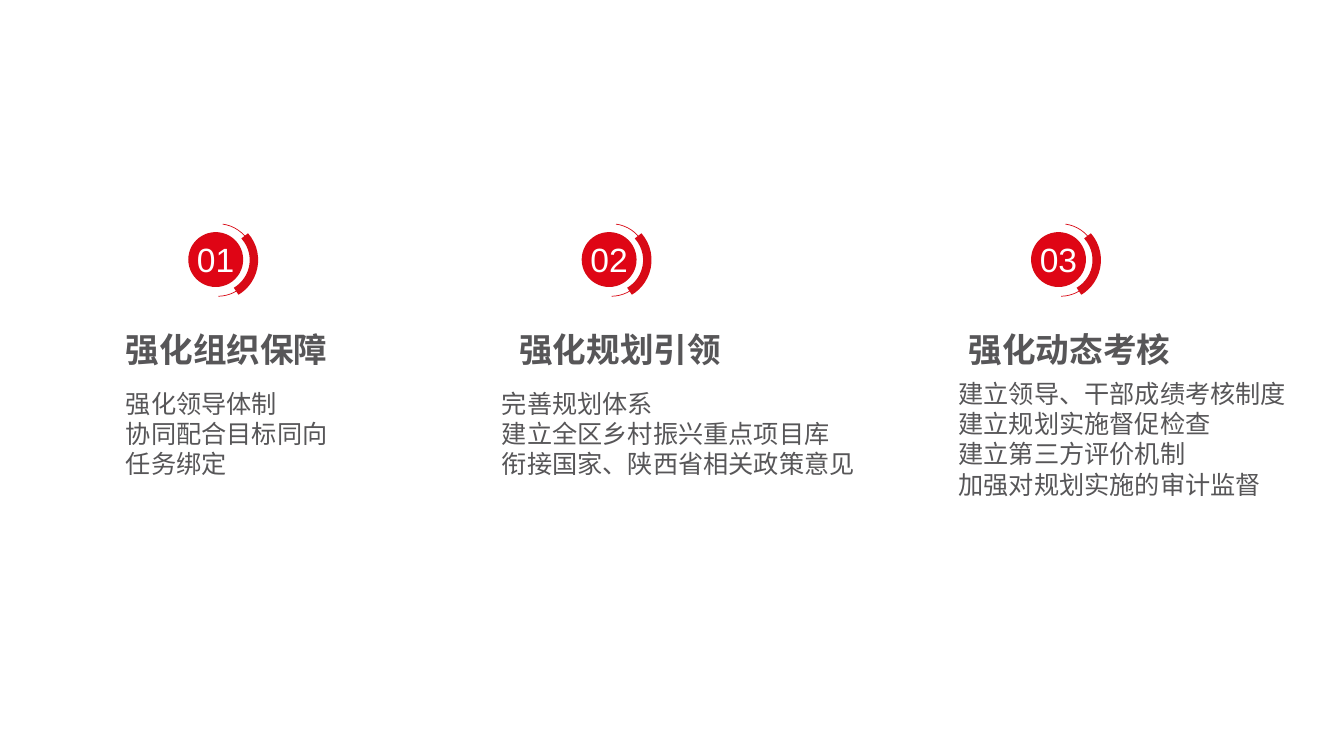
from lxml.etree import SubElement
from pptx import Presentation
from pptx.dml.color import RGBColor
from pptx.enum.shapes import MSO_SHAPE as SHAPE
from pptx.enum.text import MSO_ANCHOR as ANCHOR, PP_ALIGN as ALIGN
from pptx.oxml.ns import qn
from pptx.util import Pt

COLUMNS = [
    {"number": "01", "heading": "强化组织保障", "left": 85, "body": (85, 275, 157),
     "lines": ["强化领导体制", "协同配合目标同向", "任务绑定"]},
    {"number": "02", "heading": "强化规划引领", "left": 366, "body": (353.5, 275, 268),
     "lines": ["完善规划体系", "建立全区乡村振兴重点项目库", "衔接国家、陕西省相关政策意见"]},
    {"number": "03", "heading": "强化动态考核", "left": 687, "body": (679.7, 268, 275),
     "lines": ["建立领导、干部成绩考核制度", "建立规划实施督促检查",
               "建立第三方评价机制", "加强对规划实施的审计监督"]},
]
ARCS = [(34.06, 205.29, 0.5), (74.49, 175.71, 6)]
COLORS = {"disc": "DF0515", "ring": "D80A16", "text": "575658", "number": "FFFFFF"}
CJK, LATIN = "Noto Sans CJK SC", "Arial"
LINE_RATIO = 1.2


def rgb(name):
    return RGBColor.from_string(COLORS[name])


def add_run(p, text, size, font, color, bold=False):
    r = p.add_run()
    r.text = text
    r.font.size = Pt(size)
    r.font.bold = bold
    r.font.name = font
    r.font.color.rgb = rgb(color)
    SubElement(r.font._element, qn("a:ea")).set("typeface", font)


def add_text(shapes, left, top, width, lines, size, bold=False):
    height = len(lines) * size * LINE_RATIO + 4.4
    sp = shapes.add_textbox(Pt(left), Pt(top), Pt(width), Pt(height))
    tf = sp.text_frame
    tf.word_wrap = True
    tf.margin_left = tf.margin_right = Pt(5)
    tf.margin_top = tf.margin_bottom = Pt(2.2)
    for i, line in enumerate(lines):
        p = tf.paragraphs[0] if i == 0 else tf.add_paragraph()
        p.line_spacing = Pt(size * LINE_RATIO)
        add_run(p, line, size, CJK, "text", bold)


def add_round(shapes, kind, left, top, size, line_width):
    sp = shapes.add_shape(kind, Pt(left), Pt(top), Pt(size), Pt(size))
    sp.shadow.inherit = False
    sp.line.color.rgb = rgb("ring")
    sp.line.width = Pt(line_width)
    return sp


def add_badge(shapes, left, number):
    disc = add_round(shapes, SHAPE.OVAL, left + 50, 166.3, 38.2, 1)
    disc.fill.solid()
    disc.fill.fore_color.rgb = rgb("disc")
    tf = disc.text_frame
    tf.word_wrap = False
    tf.vertical_anchor = ANCHOR.MIDDLE
    p = tf.paragraphs[0]
    p.alignment = ALIGN.CENTER
    add_run(p, number, 24, LATIN, "number")
    for start, end, width in ARCS:
        arc = add_round(shapes, SHAPE.ARC, left + 44.6, 159.8, 51.8, width)
        arc.fill.background()
        arc.rotation = 243.7
        arc.adjustments[0] = start * 0.6
        arc.adjustments[1] = end * 0.6


prs = Presentation()
prs.slide_width, prs.slide_height = Pt(960), Pt(540)
slide = prs.slides.add_slide(prs.slide_layouts[6])
for column in COLUMNS:
    group = slide.shapes.add_group_shape()
    add_text(group.shapes, column["left"], 232.5, 157, [column["heading"]], 24, True)
    add_badge(group.shapes, column["left"], column["number"])
    add_text(slide.shapes, *column["body"], column["lines"], 18)
prs.save("out.pptx")
